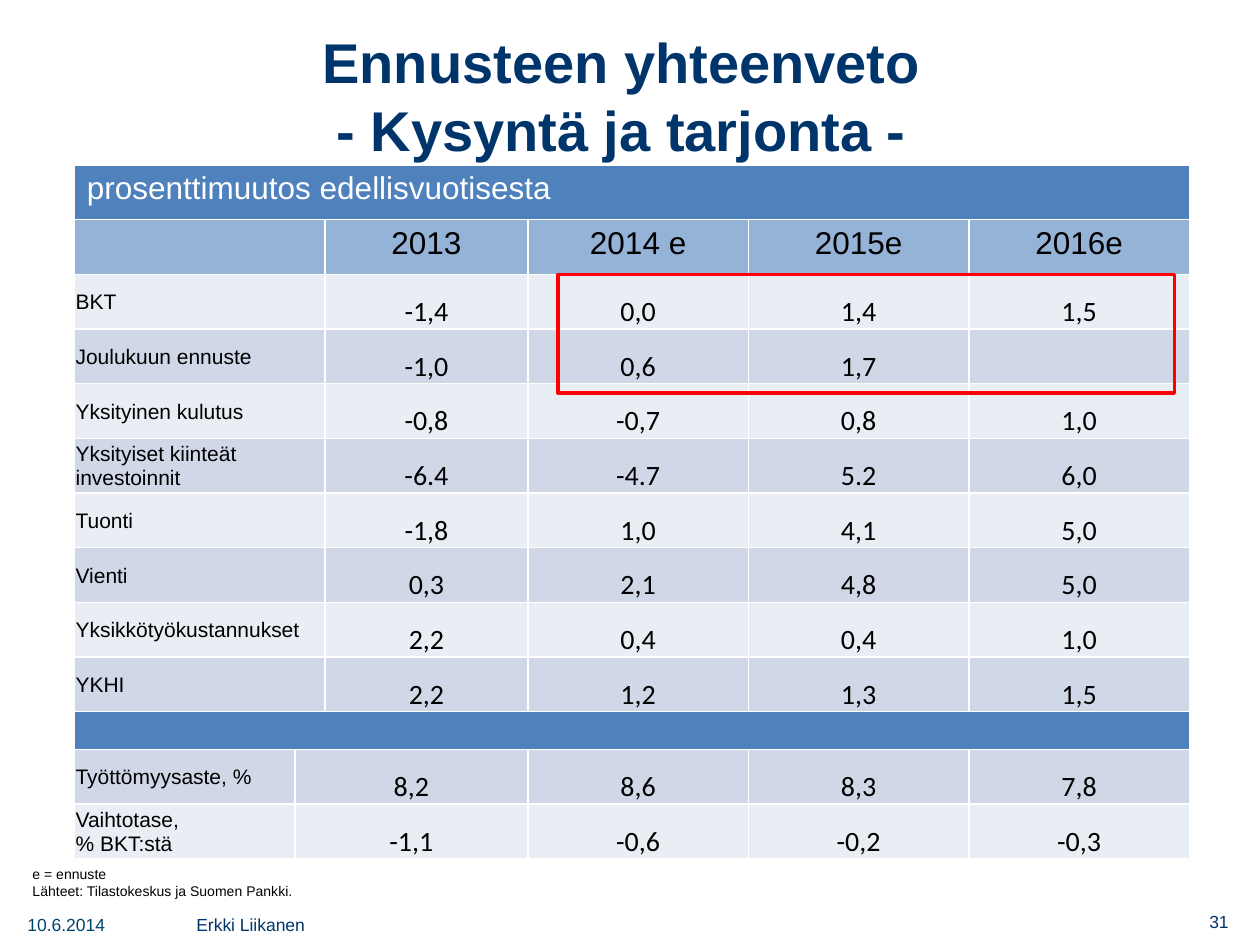
from copy import deepcopy
from dataclasses import dataclass

from lxml import etree
from pptx import Presentation
from pptx import util as u
from pptx.dml.color import RGBColor
from pptx.enum import shapes, text
from pptx.oxml.ns import qn

PX = 9144
LEFT, CENTER, RIGHT = text.PP_ALIGN.LEFT, text.PP_ALIGN.CENTER, text.PP_ALIGN.RIGHT
TOP, MIDDLE, BOTTOM = text.MSO_ANCHOR.TOP, text.MSO_ANCHOR.MIDDLE, text.MSO_ANCHOR.BOTTOM


@dataclass(frozen=True)
class Theme:
    navy: str = "00356C"
    date_blue: str = "00436F"
    black: str = "000000"
    white: str = "FFFFFF"
    banner: str = "4F81BD"
    years: str = "95B3D7"
    light: str = "E9EDF4"
    dark: str = "D0D8E8"
    highlight: str = "FF0000"
    heading_font: str = "Arial"
    number_font: str = "Calibri"
    title: int = 32
    header: int = 18
    value: int = 16
    label: int = 12
    footer: int = 10
    note: int = 8


def px(length):
    return round(length * PX)


def write(frame, words, *, size, color, font, bold=False, align=LEFT):
    paragraph = frame.paragraphs[0]
    paragraph.text = words.replace("\n", "\v")
    paragraph.alignment = align
    for run in paragraph.runs:
        run.font.size = u.Pt(size)
        run.font.name = font
        run.font.bold = bold
        run.font.color.rgb = RGBColor.from_string(color)
    for line_break in paragraph._p.findall(qn("a:br")):
        line_break.append(deepcopy(paragraph.runs[0]._r.rPr))


class Deck:
    def __init__(self, theme, width, height):
        self.theme = theme
        self.file = Presentation()
        self.file.slide_width, self.file.slide_height = px(width), px(height)
        self.slide = self.file.slides.add_slide(self.file.slide_layouts[6])

    def text_box(self, words, box, **style):
        frame = self.slide.shapes.add_textbox(*map(px, box)).text_frame
        frame.word_wrap = True
        frame.vertical_anchor = MIDDLE
        write(frame, words, font=self.theme.heading_font, **style)

    def rectangle(self, box, fill=None, line=None, line_width=2):
        rectangle = self.slide.shapes.add_shape(shapes.MSO_SHAPE.RECTANGLE, *map(px, box))
        rectangle.shadow.inherit = False
        for part, color in ((rectangle.fill, fill), (rectangle.line.fill, line)):
            if color:
                part.solid()
                part.fore_color.rgb = RGBColor.from_string(color)
            else:
                part.background()
        if line:
            rectangle.line.width = u.Pt(line_width)
        return rectangle

    def note(self, words, box):
        frame = self.rectangle(box, fill=self.theme.white).text_frame
        frame.word_wrap = True
        frame.auto_size = text.MSO_AUTO_SIZE.SHAPE_TO_FIT_TEXT
        frame.vertical_anchor = TOP
        write(frame, words, size=self.theme.note, color=self.theme.black,
              font=self.theme.heading_font)

    def table(self, left, top, columns, rows):
        frame = self.slide.shapes.add_table(
            len(rows), len(columns), px(left), px(top), px(sum(columns)), px(sum(rows)))
        grid = frame.table
        grid.first_row = grid.horz_banding = False
        for column, width in zip(grid.columns, columns):
            column.width = px(width)
        for row, height in zip(grid.rows, rows):
            row.height = px(height)
        return grid

    def fill_row(self, grid, row, color):
        for cell in grid.rows[row].cells:
            properties = cell._tc.get_or_add_tcPr()
            for side in ("lnL", "lnR", "lnT", "lnB"):
                border = etree.SubElement(properties, qn(f"a:{side}"), w=str(u.Pt(1)))
                paint = etree.SubElement(border, qn("a:solidFill"))
                etree.SubElement(paint, qn("a:srgbClr"), val=self.theme.white)
            cell.fill.solid()
            cell.fill.fore_color.rgb = RGBColor.from_string(color)

    def heading_cell(self, cell, words, color, align):
        write(cell.text_frame, words, size=self.theme.header, color=color,
              font=self.theme.heading_font, align=align)

    def body_cell(self, cell, words, anchor, **style):
        cell.margin_left = cell.margin_right = cell.margin_top = px(1)
        cell.margin_bottom = 0
        cell.vertical_anchor = anchor
        write(cell.text_frame, words, color=self.theme.black, **style)

    def data_row(self, grid, row, label, values, merged, color):
        theme = self.theme
        self.fill_row(grid, row, color)
        grid.cell(row, merged).merge(grid.cell(row, merged + 1))
        self.body_cell(grid.cell(row, 0), label, MIDDLE,
                       size=theme.label, font=theme.heading_font)
        first_value = 2 if merged == 0 else 1
        for column, value in zip((first_value, 3, 4, 5), values):
            if value:
                self.body_cell(grid.cell(row, column), value, BOTTOM,
                               size=theme.value, font=theme.number_font, align=CENTER)

    def separator_row(self, grid, row):
        self.fill_row(grid, row, self.theme.banner)
        for cell in grid.rows[row].cells:
            paragraph = cell.text_frame.paragraphs[0]._p
            etree.SubElement(paragraph, qn("a:endParaRPr"), sz=str(self.theme.note * 100))
        grid.cell(row, 0).merge(grid.cell(row, 5))


YEARS = ("2013", "2014 e", "2015e", "2016e")
GROWTH = (
    ("BKT", "-1,4", "0,0", "1,4", "1,5"),
    ("Joulukuun ennuste", "-1,0", "0,6", "1,7", ""),
    ("Yksityinen kulutus", "-0,8", "-0,7", "0,8", "1,0"),
    ("Yksityiset kiinteät investoinnit", "-6.4", "-4.7", "5.2", "6,0"),
    ("Tuonti", "-1,8", "1,0", "4,1", "5,0"),
    ("Vienti", "0,3", "2,1", "4,8", "5,0"),
    ("Yksikkötyökustannukset", "2,2", "0,4", "0,4", "1,0"),
    ("YKHI", "2,2", "1,2", "1,3", "1,5"),
)
BALANCES = (
    ("Työttömyysaste, %", "8,2", "8,6", "8,3", "7,8"),
    ("Vaihtotase, \n% BKT:stä", "-1,1", "-0,6", "-0,2", "-0,3"),
)


def add_forecast(deck):
    theme = deck.theme
    separator = 2 + len(GROWTH)
    row_height = (551 - 30) / 12
    heights = [row_height] * separator + [30] + [row_height] * len(BALANCES)
    grid = deck.table(59, 131, (175, 14, 161, 175, 175, 175), heights)

    deck.fill_row(grid, 0, theme.banner)
    grid.cell(0, 0).merge(grid.cell(0, 5))
    deck.heading_cell(grid.cell(0, 0), "prosenttimuutos edellisvuotisesta", theme.white, LEFT)
    deck.fill_row(grid, 1, theme.years)
    grid.cell(1, 0).merge(grid.cell(1, 1))
    for column, year in enumerate(YEARS, 2):
        deck.heading_cell(grid.cell(1, column), year, theme.black, CENTER)

    deck.separator_row(grid, separator)
    for first, records, merged in ((2, GROWTH, 0), (separator + 1, BALANCES, 1)):
        for row, (label, *values) in enumerate(records, first):
            color = theme.dark if row % 2 else theme.light
            deck.data_row(grid, row, label, values, merged, color)


def main():
    theme = Theme()
    deck = Deck(theme, 1000, 750)
    deck.text_box("Ennusteen yhteenveto \n- Kysyntä ja tarjonta - ", (58, 13, 883, 125),
                  size=theme.title, color=theme.navy, bold=True, align=CENTER)
    add_forecast(deck)
    deck.text_box("Erkki Liikanen", (146, 716, 205, 36), size=theme.footer, color=theme.navy)
    deck.text_box("31", (878, 713, 107, 37), size=theme.footer, color=theme.navy, align=RIGHT)
    deck.rectangle((443, 218, 489, 94), line=theme.highlight)
    deck.text_box("10.6.2014", (12, 716, 126, 36), size=theme.footer, color=theme.date_blue)
    deck.note("e = ennuste \nLähteet: Tilastokeskus ja Suomen Pankki.", (16, 682, 260, 37))
    deck.file.save("out.pptx")


if __name__ == "__main__":
    main()
